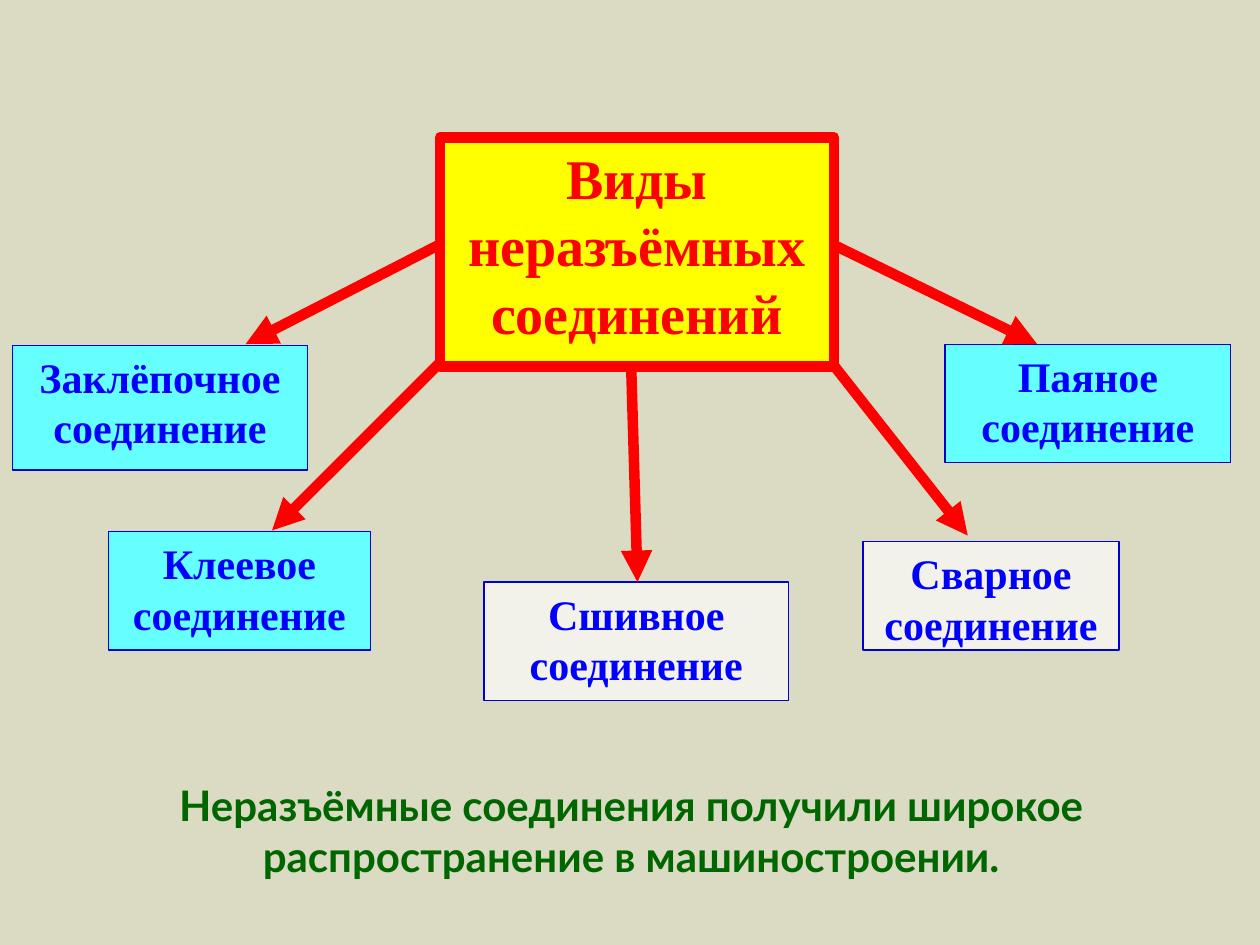
from dataclasses import dataclass

from lxml.etree import SubElement
from pptx import Presentation
from pptx.dml.color import RGBColor
from pptx.enum.shapes import MSO_CONNECTOR, MSO_SHAPE
from pptx.enum.text import MSO_ANCHOR, MSO_AUTO_SIZE, PP_ALIGN
from pptx.oxml.ns import qn
from pptx.util import Pt


@dataclass(frozen=True)
class Theme:
    background: str = "DBDAC2"
    red: str = "FF0000"
    yellow: str = "FFFF00"
    cyan: str = "66FFFF"
    pale: str = "F2F2EB"
    border: str = "0000D0"
    blue: str = "0000FF"
    green: str = "006600"
    serif: str = "Times New Roman"
    sans: str = "Lato"
    title_size: int = 32
    text_size: int = 24
    thick: float = 6
    thin: float = 0.75
    leading: float = 1.2


def write(tf, text, *, font, size, color, leading):
    tf.word_wrap = True
    tf.auto_size = MSO_AUTO_SIZE.NONE
    tf.vertical_anchor = MSO_ANCHOR.TOP
    p = tf.paragraphs[0]
    p.alignment = PP_ALIGN.CENTER
    p.line_spacing = Pt(size * leading)
    r = p.add_run()
    r.text = text
    r.font.name = font
    r.font.size = Pt(size)
    r.font.bold = True
    r.font.color.rgb = RGBColor.from_string(color)


class Diagram:
    def __init__(self, slide, theme):
        self.s = slide
        self.theme = theme
        fill = slide.background.fill
        fill.solid()
        fill.fore_color.rgb = RGBColor.from_string(theme.background)

    def paint(self, sp, fill, line, width):
        sp.fill.solid()
        sp.fill.fore_color.rgb = RGBColor.from_string(fill)
        sp.line.color.rgb = RGBColor.from_string(line)
        sp.line.width = Pt(width)

    def title(self, text, x, y, w, h):
        t = self.theme
        sp = self.s.shapes.title
        sp.left, sp.top, sp.width, sp.height = Pt(x), Pt(y), Pt(w), Pt(h)
        self.paint(sp, t.yellow, t.red, t.thick)
        write(sp.text_frame, text, font=t.serif, size=t.title_size,
              color=t.red, leading=t.leading)

    def box(self, text, fill, x, y, w, h):
        t = self.theme
        sp = self.s.shapes.add_shape(MSO_SHAPE.RECTANGLE, Pt(x), Pt(y), Pt(w), Pt(h))
        sp.shadow.inherit = False
        self.paint(sp, fill, t.border, t.thin)
        write(sp.text_frame, text, font=t.serif, size=t.text_size,
              color=t.blue, leading=t.leading)

    def arrow(self, x1, y1, x2, y2):
        t = self.theme
        c = self.s.shapes.add_connector(
            MSO_CONNECTOR.STRAIGHT, Pt(x1), Pt(y1), Pt(x2), Pt(y2))
        c.line.color.rgb = RGBColor.from_string(t.red)
        c.line.width = Pt(t.thick)
        SubElement(c.line._get_or_add_ln(), qn("a:tailEnd"), type="triangle")
        SubElement(c._element.spPr, qn("a:effectLst"))

    def caption(self, text, x, y, w, h):
        t = self.theme
        sp = self.s.shapes.add_textbox(Pt(x), Pt(y), Pt(w), Pt(h))
        write(sp.text_frame, text, font=t.sans, size=t.text_size,
              color=t.green, leading=t.leading)


def main():
    prs = Presentation()
    prs.slide_width, prs.slide_height = Pt(720), Pt(540)
    theme = Theme()
    d = Diagram(prs.slides.add_slide(prs.slide_layouts[5]), theme)

    d.title("Виды неразъёмных соединений", 251.3, 78.5, 225.4, 131)

    joints = [
        ("Сварное", theme.pale, 493.2, 309.6, 146.2, 61.9),
        ("Клеевое", theme.cyan, 61.9, 303.8, 149.8, 67.7),
        ("Паяное", theme.cyan, 540, 196.8, 163.4, 67.7),
        ("Заклёпочное", theme.cyan, 7.2, 197.3, 168.5, 71.3),
        ("Сшивное", theme.pale, 276.5, 332.6, 174.2, 67.7),
    ]
    for kind, fill, *place in joints:
        d.box(f"{kind} соединение", fill, *place)

    arrows = [
        (251.3, 139.7, 140.4, 196.6),
        (251.3, 207.4, 155.5, 303.1),
        (360.7, 209.5, 364.3, 332.6),
        (475.9, 208.1, 553, 306),
        (475.9, 139.7, 592.6, 196.6),
    ]
    for ends in arrows:
        d.arrow(*ends)

    d.caption("Неразъёмные соединения получили широкое распространение "
              "в машиностроении.", 24.5, 442.1, 672.5, 65.5)
    prs.save("out.pptx")


if __name__ == "__main__":
    main()
